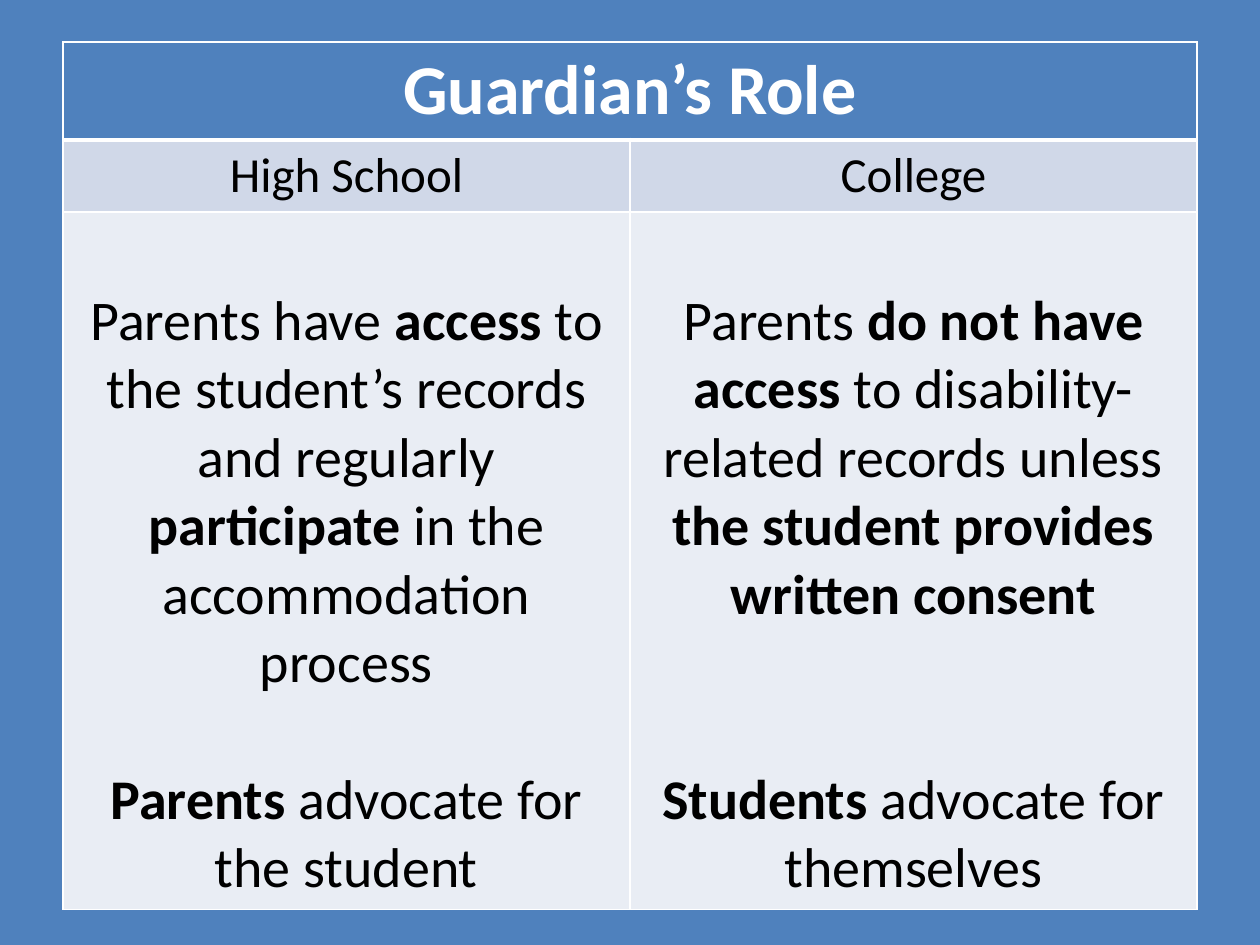
from dataclasses import dataclass

from lxml import etree
from pptx import Presentation
from pptx.dml.color import RGBColor
from pptx.enum.text import PP_ALIGN
from pptx.oxml.ns import qn
from pptx.table import _Cell
from pptx.util import Emu, Pt

CENTER = PP_ALIGN.CENTER
BLUE = RGBColor(0x4F, 0x81, 0xBD)
BAND = RGBColor(0xD0, 0xD8, 0xE8)
PALE = RGBColor(0xE9, 0xED, 0xF4)
WHITE = RGBColor(0xFF, 0xFF, 0xFF)
BLACK = RGBColor(0, 0, 0)
FONT = "Calibri"

PX_PER_INCH = 126
COLUMN_WIDTH = 567
ROW_HEIGHTS = (98, 72, 697)
BODY_TOP_MARGIN = 75
BODY_LINE = 39  # points, one line of body text


@dataclass(frozen=True)
class Run:
    text: str
    bold: bool = False


@dataclass(frozen=True)
class Para:
    runs: tuple[Run, ...]
    lines_before: int = 0


@dataclass(frozen=True)
class RowStyle:
    size: int
    color: RGBColor
    fill: RGBColor
    top_line: int = 1
    bottom_line: int = 1
    top_margin: int = 6


STYLES = (
    RowStyle(40, WHITE, BLUE, bottom_line=3),
    RowStyle(28, BLACK, BAND, top_line=3),
    RowStyle(32, BLACK, PALE, top_margin=BODY_TOP_MARGIN),
)

HIGH_SCHOOL = (
    Para((
        Run("Parents have "),
        Run("access", True),
        Run(" to the student’s records and regularly "),
        Run("participate", True),
        Run(" in the accommodation process"),
    )),
    Para((Run("Parents", True), Run(" advocate for the student")), 1),
)
COLLEGE = (
    Para((
        Run("Parents "),
        Run("do not have access", True),
        Run(" to disability-related records unless"),
        Run(" the student provides written consent", True),
    )),
    Para((Run("Students", True), Run(" advocate for themselves")), 2),
)
ROWS = (
    ((Para((Run("Guardian’s Role", True),)),), ()),
    ((Para((Run("High School"),)),), (Para((Run("College"),)),)),
    (HIGH_SCHOOL, COLLEGE),
)


def px(n: int) -> Emu:
    return Emu(round(n * 914400 / PX_PER_INCH))


def add_border(cell: _Cell, side: str, width: int) -> None:
    """Add a white line; call before the cell's fill is set."""
    tc_pr = cell._tc.get_or_add_tcPr()
    ln = etree.SubElement(tc_pr, qn(f"a:ln{side}"), w=str(Pt(width)))
    fill = etree.SubElement(ln, qn("a:solidFill"))
    etree.SubElement(fill, qn("a:srgbClr"), val=str(WHITE))


def style_cell(cell: _Cell, style: RowStyle) -> None:
    widths = {"L": 1, "R": 1, "T": style.top_line, "B": style.bottom_line}
    for side, width in widths.items():
        add_border(cell, side, width)
    cell.fill.solid()
    cell.fill.fore_color.rgb = style.fill
    cell.margin_top = px(style.top_margin)


def write_cell(cell: _Cell, paras: tuple[Para, ...], style: RowStyle) -> None:
    tf = cell.text_frame
    for i, para in enumerate(paras):
        p = tf.add_paragraph() if i else tf.paragraphs[0]
        p.alignment = CENTER
        p.space_before = Pt(para.lines_before * BODY_LINE)
        for run in para.runs:
            r = p.add_run()
            r.text = run.text
            r.font.name = FONT
            r.font.size = Pt(style.size)
            r.font.bold = run.bold
            r.font.color.rgb = style.color


def main() -> None:
    prs = Presentation()
    prs.slide_width, prs.slide_height = px(1260), px(945)
    s = prs.slides.add_slide(prs.slide_layouts[6])
    s.background.fill.solid()
    s.background.fill.fore_color.rgb = BLUE

    table = s.shapes.add_table(
        len(ROWS), 2, px(63), px(42), px(2 * COLUMN_WIDTH), px(sum(ROW_HEIGHTS))
    ).table
    for row, height in zip(table.rows, ROW_HEIGHTS):
        row.height = px(height)
    table.cell(0, 0).merge(table.cell(0, 1))
    for i, (row, style) in enumerate(zip(ROWS, STYLES)):
        for j, paras in enumerate(row):
            style_cell(table.cell(i, j), style)
            write_cell(table.cell(i, j), paras, style)
    prs.save("out.pptx")


if __name__ == "__main__":
    main()
